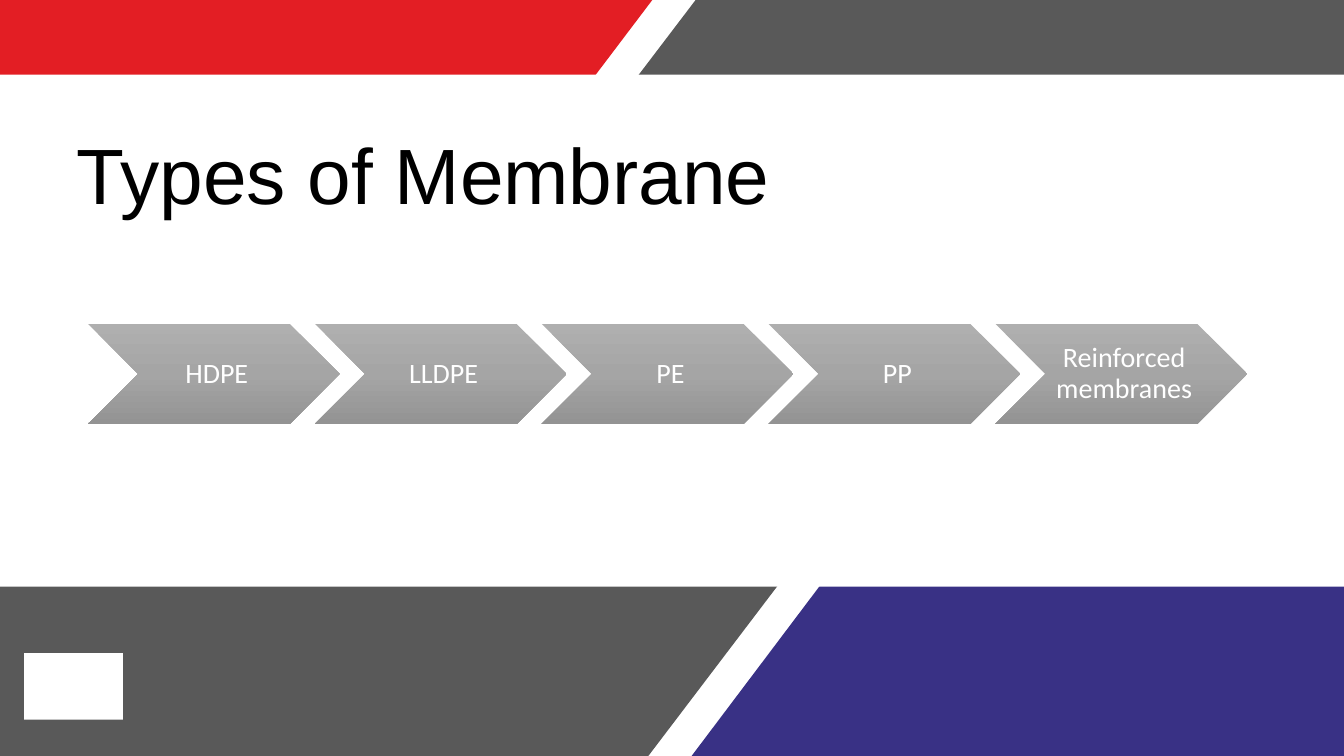
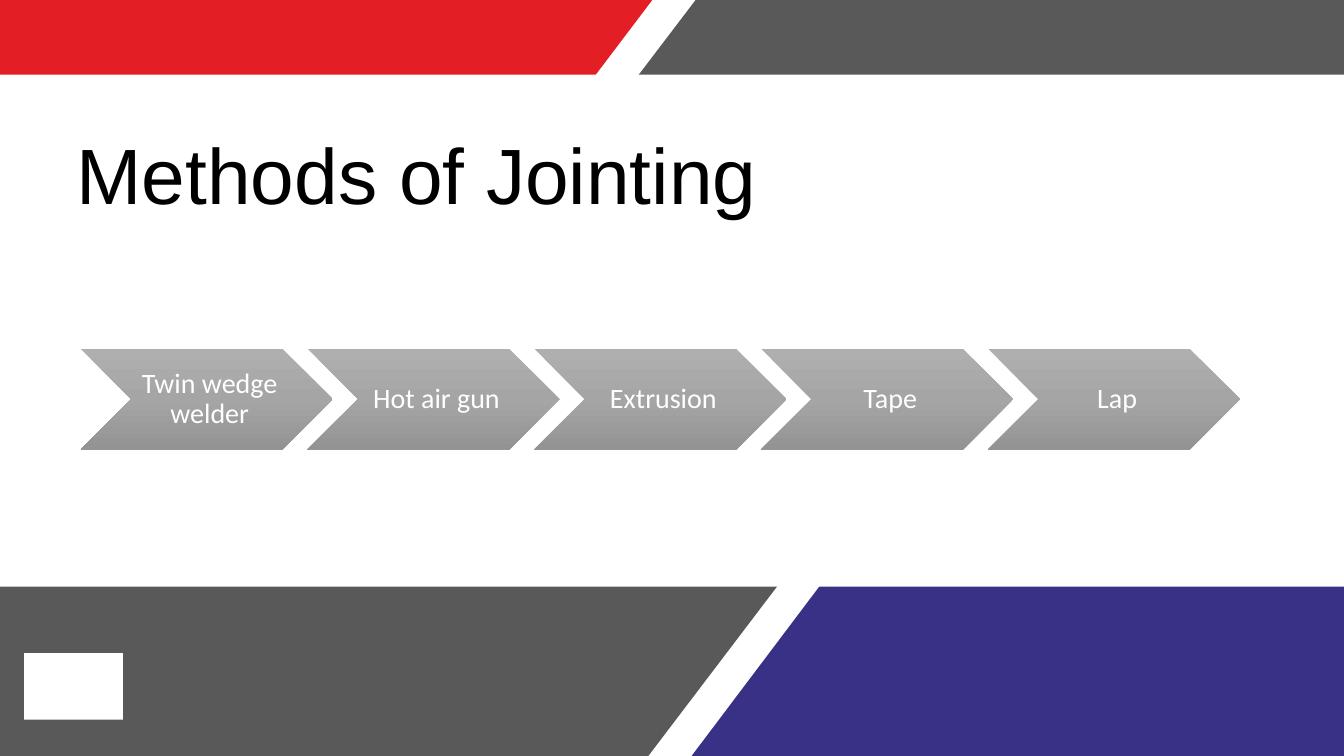
from copy import deepcopy

from pptx import Presentation
from pptx.dml.color import RGBColor
from pptx.enum.shapes import MSO_SHAPE
from pptx.enum.text import MSO_ANCHOR, MSO_AUTO_SIZE, PP_ALIGN
from pptx.oxml.ns import qn
from pptx.util import Inches, Pt

CHEVRON, RECTANGLE = MSO_SHAPE.CHEVRON, MSO_SHAPE.RECTANGLE
LEFT, CENTER = PP_ALIGN.LEFT, PP_ALIGN.CENTER
BOTTOM, MIDDLE = MSO_ANCHOR.BOTTOM, MSO_ANCHOR.MIDDLE
NO_AUTOFIT = MSO_AUTO_SIZE.NONE

SLIDE_W, SLIDE_H = 13.33, 7.5
RED, BLUE, GREY = "E31E24", "393185", "595959"
WHITE, BLACK = "FFFFFF", "000000"
CHEVRON_STOPS = [(0, "AFAFAF"), (0.5, "A5A5A5"), (1, "939393")]

# Title, left and top of the chevron row, chevron labels
SLIDES = [
    ("Types of Membrane", 0.87, 3.21,
     ["HDPE", "LLDPE", "PE", "PP", "Reinforced membranes"]),
    ("Methods of Jointing", 0.8, 3.46,
     ["Twin wedge welder", "Hot air gun", "Extrusion", "Tape", "Lap"]),
]

# Slanted bands: colour and corner points
BANDS = [
    (RED, [(0, 0), (6.47, 0), (4.48, 2.63), (0, 2.63)]),
    (GREY, [(6.9, 0), (SLIDE_W, 0), (SLIDE_W, 2.63), (4.9, 2.63)]),
    (GREY, [(0, 4.88), (8.42, 4.88), (6.43, SLIDE_H), (0, SLIDE_H)]),
    (BLUE, [(8.85, 4.86), (SLIDE_W, 4.86), (SLIDE_W, SLIDE_H), (6.86, SLIDE_H)]),
]
# White areas over the bands: left, top, width, height
CONTENT_PANEL = (0, 0.74, SLIDE_W, 5.08)
CORNER_BOX = (0.24, 6.48, 0.98, 0.66)

TITLE_BOX = (0.66, 0.75, 12.14, 1.48)
CHEVRON_W, CHEVRON_H, CHEVRON_PITCH = 2.5, 1, 2.25


def rgb(color):
    return RGBColor.from_string(color)


def paint(shape, color):
    shape.shadow.inherit = False
    shape.fill.solid()
    shape.fill.fore_color.rgb = rgb(color)
    shape.line.fill.background()


def style_text(frame, font_name, size, color, align, anchor, spacing):
    frame.word_wrap = True
    frame.auto_size = NO_AUTOFIT
    frame.vertical_anchor = anchor
    for paragraph in frame.paragraphs:
        paragraph.alignment = align
        paragraph.line_spacing = spacing
        for run in paragraph.runs:
            run.font.name = font_name
            run.font.size = Pt(size)
            run.font.color.rgb = rgb(color)


def add_band(shapes, color, corners):
    points = [(Inches(x), Inches(y)) for x, y in corners]
    builder = shapes.build_freeform(*points[0])
    builder.add_line_segments(points[1:], close=True)
    band = builder.convert_to_shape()
    paint(band, color)
    return band


def add_white_area(shapes, box):
    area = shapes.add_shape(RECTANGLE, *map(Inches, box))
    paint(area, WHITE)
    return area


def decorate_layout(layout, shapes):
    """Draw the shared background with a slide's shapes and move it to the layout."""
    for placeholder in list(layout.placeholders)[1:]:
        placeholder.element.getparent().remove(placeholder.element)
    background = [add_band(shapes, color, corners) for color, corners in BANDS]
    background += [add_white_area(shapes, box) for box in (CONTENT_PANEL, CORNER_BOX)]
    for part in background:
        layout.shapes.element.append(part.element)


def set_title(title, text):
    title.left, title.top, title.width, title.height = map(Inches, TITLE_BOX)
    title.text_frame.text = text
    style_text(title.text_frame, "Arial", 56, BLACK, LEFT, BOTTOM, 1.4)


def fill_gradient(shape, stops):
    """Fill from top to bottom with three stops."""
    shape.fill.gradient()
    shape.fill.gradient_angle = 270
    stop_list = shape.element.spPr.find(".//" + qn("a:gsLst"))
    stop_list.insert(1, deepcopy(stop_list[0]))
    for stop, (position, color) in zip(shape.fill.gradient_stops, stops):
        stop.position = position
        stop.color.rgb = rgb(color)


def add_chevron_row(shapes, left, top, labels):
    for index, label in enumerate(labels):
        chevron = shapes.add_shape(
            CHEVRON, Inches(left + index * CHEVRON_PITCH), Inches(top),
            Inches(CHEVRON_W), Inches(CHEVRON_H))
        chevron.shadow.inherit = False
        chevron.line.fill.background()
        fill_gradient(chevron, CHEVRON_STOPS)
        frame = chevron.text_frame
        frame.margin_left = Inches(0.09)
        frame.margin_top = frame.margin_right = frame.margin_bottom = Inches(0.03)
        frame.text = label
        style_text(frame, "Calibri", 20, WHITE, CENTER, MIDDLE, 0.9)


def main():
    deck = Presentation()
    deck.slide_width, deck.slide_height = Inches(SLIDE_W), Inches(SLIDE_H)
    layout = deck.slide_layouts.get_by_name("Title Only")
    slides = [deck.slides.add_slide(layout) for _ in SLIDES]
    decorate_layout(layout, slides[0].shapes)
    for slide, (title, left, top, labels) in zip(slides, SLIDES):
        set_title(slide.shapes.title, title)
        add_chevron_row(slide.shapes, left, top, labels)
    deck.save("out.pptx")


if __name__ == "__main__":
    main()
